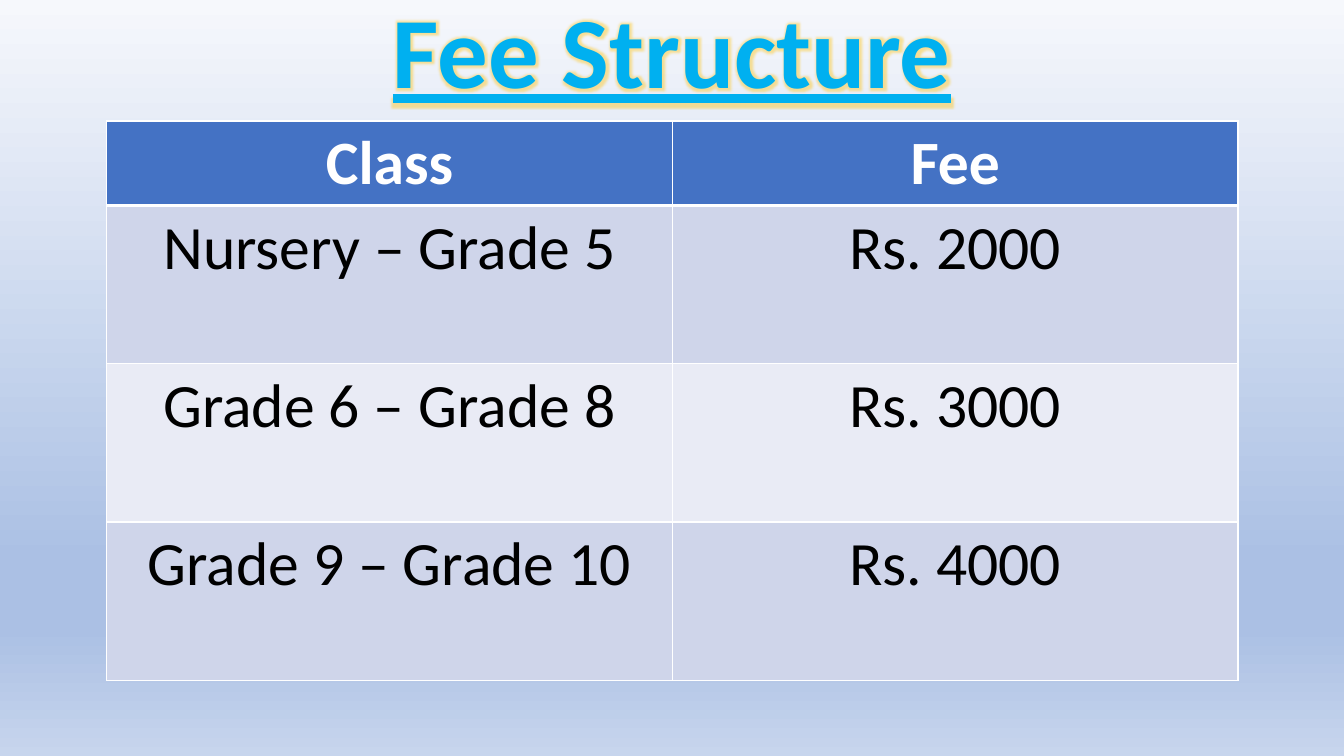
from lxml.etree import SubElement
from pptx import Presentation
from pptx.dml.color import RGBColor
from pptx.enum.text import MSO_ANCHOR, PP_ALIGN
from pptx.oxml import parse_xml
from pptx.oxml.ns import nsdecls, qn
from pptx.util import Inches, Pt

WIDTH, HEIGHT = Inches(13.33), Inches(7.5)
FONT = "Calibri"
SKY = RGBColor(0x00, 0xB0, 0xF0)
GOLD = RGBColor(0xFF, 0xC0, 0x00)
BLUE = RGBColor(0x44, 0x72, 0xC4)
BAND_DARK = RGBColor(0xCF, 0xD5, 0xEA)
BAND_LIGHT = RGBColor(0xE9, 0xEB, 0xF5)
WHITE = RGBColor(0xFF, 0xFF, 0xFF)
BLACK = RGBColor(0x00, 0x00, 0x00)
MIST = RGBColor(0xF6, 0xF8, 0xFC)
HAZE = RGBColor(0xAB, 0xC0, 0xE4)
PALE = RGBColor(0xC7, 0xD5, 0xED)

BACKDROP = [(0, MIST), (74, HAZE), (83, HAZE), (100, PALE)]
FEES = [
    ("Class", "Fee"),
    ("Nursery – Grade 5", "Rs. 2000"),
    ("Grade 6 – Grade 8", "Rs. 3000"),
    ("Grade 9 – Grade 10", "Rs. 4000"),
]
HEADER_HEIGHT, BODY_HEIGHT = Inches(0.84), Inches(1.57)


class FeeSlide:
    def __init__(self, deck):
        self.slide = deck.slides.add_slide(deck.slide_layouts[6])

    def backdrop(self, stops):
        fill = self.slide.background.fill
        fill.gradient()
        fill.gradient_angle = 270  # counter-clockwise, so top to bottom
        stop_list = self.slide.background._cSld.find(".//" + qn("a:gsLst"))
        for stop in list(stop_list):
            stop_list.remove(stop)
        for percent, color in stops:
            stop = SubElement(stop_list, qn("a:gs"), pos=str(percent * 1000))
            SubElement(stop, qn("a:srgbClr"), val=str(color))

    def span(self, frame, text, size, color, bold):
        para = frame.paragraphs[0]
        para.alignment = PP_ALIGN.CENTER
        span = para.add_run()
        span.text = text
        span.font.name = FONT
        span.font.size = Pt(size)
        span.font.bold = bold
        span.font.color.rgb = color
        return span

    def title(self, text, left, top, width, height):
        """Place a glowing, underlined heading; lengths are shares of the slide."""
        box = self.slide.shapes.add_textbox(
            int(left * WIDTH), int(top * HEIGHT), int(width * WIDTH), int(height * HEIGHT))
        box.text_frame.word_wrap = True
        span = self.span(box.text_frame, text, 72, SKY, True)
        span.font.underline = True
        glow = parse_xml(
            f'<a:effectLst {nsdecls("a")}><a:glow rad="{Pt(5)}"><a:srgbClr val="{GOLD}">'
            '<a:alpha val="40000"/></a:srgbClr></a:glow></a:effectLst>')
        span.font._element.find(qn("a:solidFill")).addnext(glow)

    def borders(self, cell, **widths):
        """Draw white cell edges; widths are points keyed by L, R, T and B."""
        properties = cell._tc.get_or_add_tcPr()
        for index, (side, width) in enumerate(widths.items()):
            properties.insert(index, parse_xml(
                f'<a:ln{side} {nsdecls("a")} w="{Pt(width)}"><a:solidFill>'
                f'<a:srgbClr val="{WHITE}"/></a:solidFill></a:ln{side}>'))

    def table(self, rows, left, top, width):
        height = HEADER_HEIGHT + BODY_HEIGHT * (len(rows) - 1)
        table = self.slide.shapes.add_table(
            len(rows), len(rows[0]), int(left * WIDTH), int(top * HEIGHT),
            int(width * WIDTH), height).table
        for row, texts in enumerate(rows):
            header = row == 0
            table.rows[row].height = HEADER_HEIGHT if header else BODY_HEIGHT
            band = BLUE if header else BAND_DARK if row % 2 else BAND_LIGHT
            for column, text in enumerate(texts):
                cell = table.cell(row, column)
                cell.vertical_anchor = MSO_ANCHOR.TOP
                cell.fill.solid()
                cell.fill.fore_color.rgb = band
                self.span(cell.text_frame, text, 44, WHITE if header else BLACK, header)
                self.borders(cell, L=1, R=1, T=3 if row == 1 else 1, B=3 if header else 1)


def main():
    deck = Presentation()
    deck.slide_width, deck.slide_height = WIDTH, HEIGHT
    page = FeeSlide(deck)
    page.backdrop(BACKDROP)
    page.title("Fee Structure", 0.0165, -0.0227, 0.967, 0.216)
    page.table(FEES, 0.0795, 0.16, 0.8417)
    deck.save("out.pptx")


if __name__ == "__main__":
    main()
